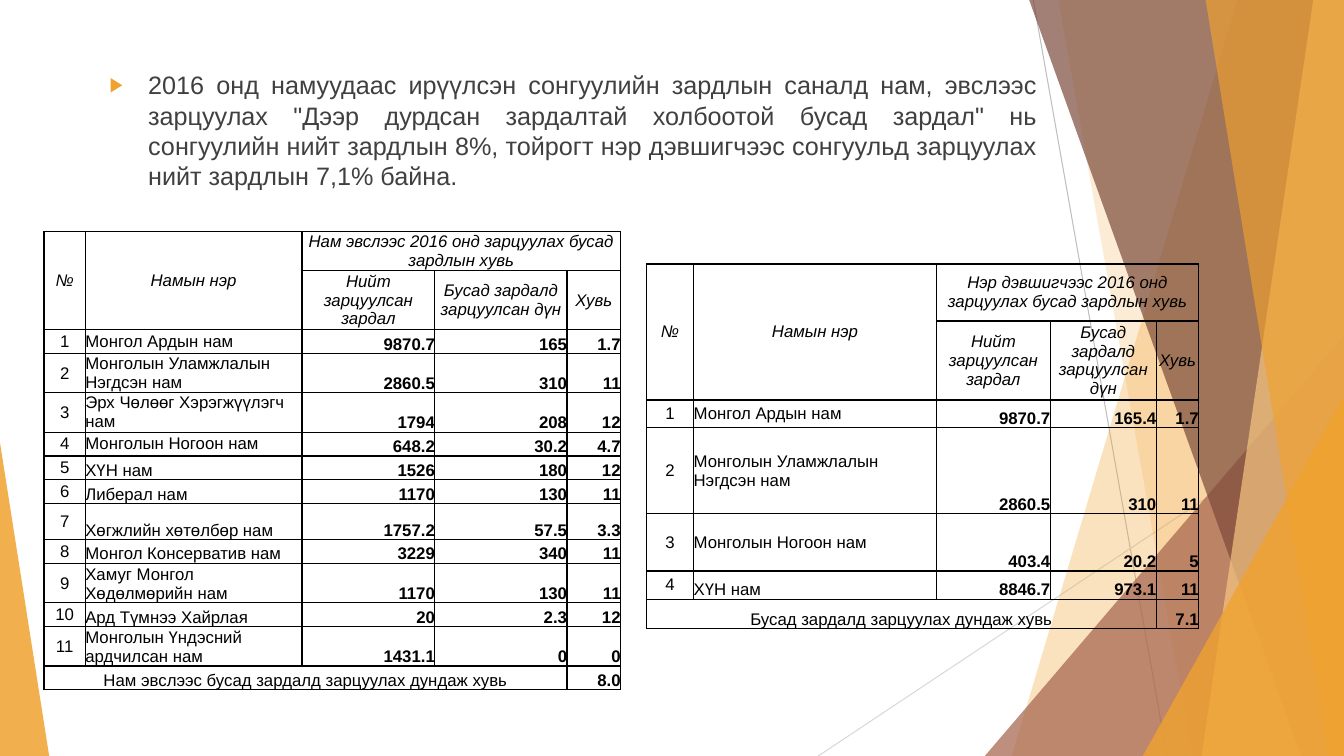
from lxml import etree
from pptx import Presentation
from pptx import util as u
from pptx.dml.color import RGBColor
from pptx.enum import shapes, text
from pptx.oxml.ns import qn

Cm, Pt = u.Cm, u.Pt
WIDE, HIGH = 33.87, 19.05
FONT = "Arial"
AMBER, RUST, BROWN, SAND = "F0A22E", "A5644E", "7C4B3B", "F6C782"
INTRO = ('2016 онд намуудаас ирүүлсэн сонгуулийн зардлын саналд нам, эвслээс '
         'зарцуулах "Дээр дурдсан зардалтай холбоотой бусад зардал" нь '
         'сонгуулийн нийт зардлын 8%, тойрогт нэр дэвшигчээс сонгуульд '
         'зарцуулах нийт зардлын 7,1% байна.')
HEADS = ["Нийт зарцуулсан зардал", "Бусад зардалд зарцуулсан дүн", "Хувь"]

PARTY = [
    ("Монгол Ардын нам", "9870.7", "165", "1.7"),
    ("Монголын Уламжлалын Нэгдсэн нам", "2860.5", "310", "11"),
    ("Эрх Чөлөөг Хэрэгжүүлэгч нам", "1794", "208", "12"),
    ("Монголын Ногоон нам", "648.2", "30.2", "4.7"),
    ("ХҮН нам", "1526", "180", "12"),
    ("Либерал нам", "1170", "130", "11"),
    ("Хөгжлийн хөтөлбөр нам", "1757.2", "57.5", "3.3"),
    ("Монгол Консерватив нам", "3229", "340", "11"),
    ("Хамуг Монгол Хөдөлмөрийн нам", "1170", "130", "11"),
    ("Ард Түмнээ Хайрлая", "20", "2.3", "12"),
    ("Монголын Үндэсний ардчилсан нам", "1431.1", "0", "0"),
]
RUNNER = [
    ("Монгол Ардын нам", "9870.7", "165.4", "1.7"),
    ("Монголын Уламжлалын Нэгдсэн нам", "2860.5", "310", "11"),
    ("Монголын Ногоон нам", "403.4", "20.2", "5"),
    ("ХҮН нам", "8846.7", "973.1", "11"),
]


def color(code):
    return RGBColor.from_string(code)


def paint(shape, code, alpha):
    """Fill a shape with a see-through colour and no outline."""
    shape.shadow.inherit = False
    shape.line.fill.background()
    shape.fill.solid()
    shape.fill.fore_color.rgb = color(code)
    tint = shape.element.spPr.find(".//" + qn("a:srgbClr"))
    etree.SubElement(tint, qn("a:alpha"), val=str(alpha * 1000))


def line(slide, x1, y1, x2, y2, code):
    link = slide.shapes.add_connector(
        shapes.MSO_CONNECTOR.STRAIGHT, Cm(x1), Cm(y1), Cm(x2), Cm(y2))
    link.line.color.rgb = color(code)
    link.line.width = Pt(0.75)
    etree.SubElement(link.element.spPr, qn("a:effectLst"))


def shard(slide, top, base, code, alpha):
    """Band from a slanted left edge to the right side of the slide."""
    form = slide.shapes.build_freeform(Cm(top), Cm(-0.02))
    form.add_line_segments([(Cm(WIDE), Cm(-0.02)), (Cm(WIDE), Cm(HIGH)),
                            (Cm(base), Cm(HIGH))], close=True)
    paint(form.convert_to_shape(), code, alpha)


def wedge(slide, x, y, wide, peak, code, alpha):
    """Triangle standing on the lower edge of the slide."""
    shape = slide.shapes.add_shape(
        shapes.MSO_SHAPE.ISOSCELES_TRIANGLE,
        Cm(x), Cm(y), Cm(wide), Cm(HIGH - y))
    shape.adjustments[0] = peak
    paint(shape, code, alpha)


def write(para, words, size, code, bold=False, slant=False):
    run = para.add_run()
    run.text = words
    font = run.font
    font.name, font.size = FONT, Pt(size)
    font.bold, font.italic = bold, slant
    font.color.rgb = color(code)


def intro(box):
    box.left, box.top, box.width, box.height = Cm(2.51), Cm(1.63), Cm(23.88), Cm(3.56)
    frame = box.text_frame
    frame.word_wrap = True
    frame.auto_size = text.MSO_AUTO_SIZE.NONE
    frame.vertical_anchor = text.MSO_ANCHOR.TOP
    para = frame.paragraphs[0]
    para.alignment = text.PP_ALIGN.JUSTIFY
    para.space_before = Pt(10)
    write(para, INTRO, 18, "404040")
    # Arrow bullet with a hanging indent
    prop = para._p.get_or_add_pPr()
    prop.set("marL", str(Cm(0.97)))
    prop.set("indent", str(Cm(-0.97)))
    tint = etree.SubElement(prop, qn("a:buClr"))
    etree.SubElement(tint, qn("a:srgbClr"), val=AMBER)
    etree.SubElement(prop, qn("a:buSzPct"), val="80000")
    etree.SubElement(prop, qn("a:buFont"), typeface=FONT)
    etree.SubElement(prop, qn("a:buChar"), char="▶")


def frame(cell):
    """Clear the fill and margins and rule all four sides."""
    cell.margin_left = cell.margin_right = 0
    cell.margin_top = cell.margin_bottom = 0
    prop = cell._tc.get_or_add_tcPr()
    for side in ("a:lnL", "a:lnR", "a:lnT", "a:lnB"):
        edge = etree.SubElement(prop, qn(side), w=str(Pt(1)))
        fill = etree.SubElement(edge, qn("a:solidFill"))
        etree.SubElement(fill, qn("a:srgbClr"), val="000000")
    cell.fill.background()


def put(cell, words, side="CENTER", stand="MIDDLE", bold=False, slant=False):
    cell.vertical_anchor = text.MSO_ANCHOR[stand]
    para = cell.text_frame.paragraphs[0]
    para.alignment = text.PP_ALIGN[side]
    write(para, words, 12, "000000", bold, slant)


def table(slide, x, y, cols, rows, head, data, mid, foot, mean):
    """Two header rows, numbered parties (the first mid centred), a mean row."""
    grid = slide.shapes.add_table(len(rows), len(cols), Cm(x), Cm(y),
                                  Cm(sum(cols)), Cm(sum(rows))).table
    grid.first_row = grid.horz_banding = False
    for col, wide in zip(grid.columns, cols):
        col.width = Cm(wide)
    for row, high in zip(grid.rows, rows):
        row.height = Cm(high)
    for cell in grid.iter_cells():
        frame(cell)
    last = len(rows) - 1
    at = grid.cell

    # Header
    at(0, 0).merge(at(1, 0))
    at(0, 1).merge(at(1, 1))
    at(0, 2).merge(at(0, 4))
    for col, words in enumerate(["№", "Намын нэр", head]):
        put(at(0, col), words, slant=True)
    for col, words in enumerate(HEADS, 2):
        put(at(1, col), words, slant=True)

    # Parties
    for num, (name, *sums) in enumerate(data, 1):
        put(at(num + 1, 0), str(num))
        put(at(num + 1, 1), name, "LEFT", "MIDDLE" if num <= mid else "BOTTOM")
        for col, words in enumerate(sums, 2):
            put(at(num + 1, col), words, "RIGHT", "BOTTOM", bold=True)

    # Mean
    at(last, 0).merge(at(last, 3))
    put(at(last, 0), foot, stand="BOTTOM")
    put(at(last, 4), mean, "RIGHT", "BOTTOM", bold=True)


def main():
    deck = Presentation()
    deck.slide_width, deck.slide_height = Cm(WIDE), Cm(HIGH)
    slide = deck.slides.add_slide(deck.slide_layouts[1])
    title = slide.shapes.title.element
    title.getparent().remove(title)
    body = slide.placeholders[1]

    # Backdrop
    line(slide, 26.04, 0, 29.41, HIGH, "BFBFBF")
    line(slide, WIDE, 10.24, 20.62, HIGH, "D9D9D9")
    shard(slide, 31.19, 25.5, AMBER, 30)
    shard(slide, 26.67, 30.05, AMBER, 20)
    wedge(slide, 24.82, 8.46, 9.05, 1, RUST, 72)
    shard(slide, 25.93, 32.79, BROWN, 70)
    shard(slide, 33.1, 30.28, SAND, 70)
    shard(slide, 30.38, 33.48, AMBER, 65)
    wedge(slide, 28.8, 9.98, 5.07, 1, AMBER, 80)
    wedge(slide, 0, 11.15, 1.24, 0, AMBER, 85)

    # Text in front of the backdrop
    slide.shapes.element.append(body.element)
    intro(body)

    # Tables
    one, two = 0.6, 0.99
    table(slide, 1.11, 5.83, [1.04, 5.46, 3.35, 3.33, 1.35],
          [two, 1.49, one, two, two, one, one, one, 0.91, one, two, one, two, one],
          "Нам эвслээс 2016 онд зарцуулах бусад зардлын хувь", PARTY, 4,
          "Нам эвслээс бусад зардалд зарцуулах дундаж хувь", "8.0")
    table(slide, 16.29, 6.65, [1.19, 6.12, 2.87, 2.67, 1.07],
          [1.44, 1.99, 0.7, 2.17, 1.44, 0.71, 0.74],
          "Нэр дэвшигчээс 2016 онд зарцуулах бусад зардлын хувь", RUNNER, 3,
          "Бусад зардалд зарцуулах дундаж хувь", "7.1")
    deck.save("out.pptx")


if __name__ == "__main__":
    main()
